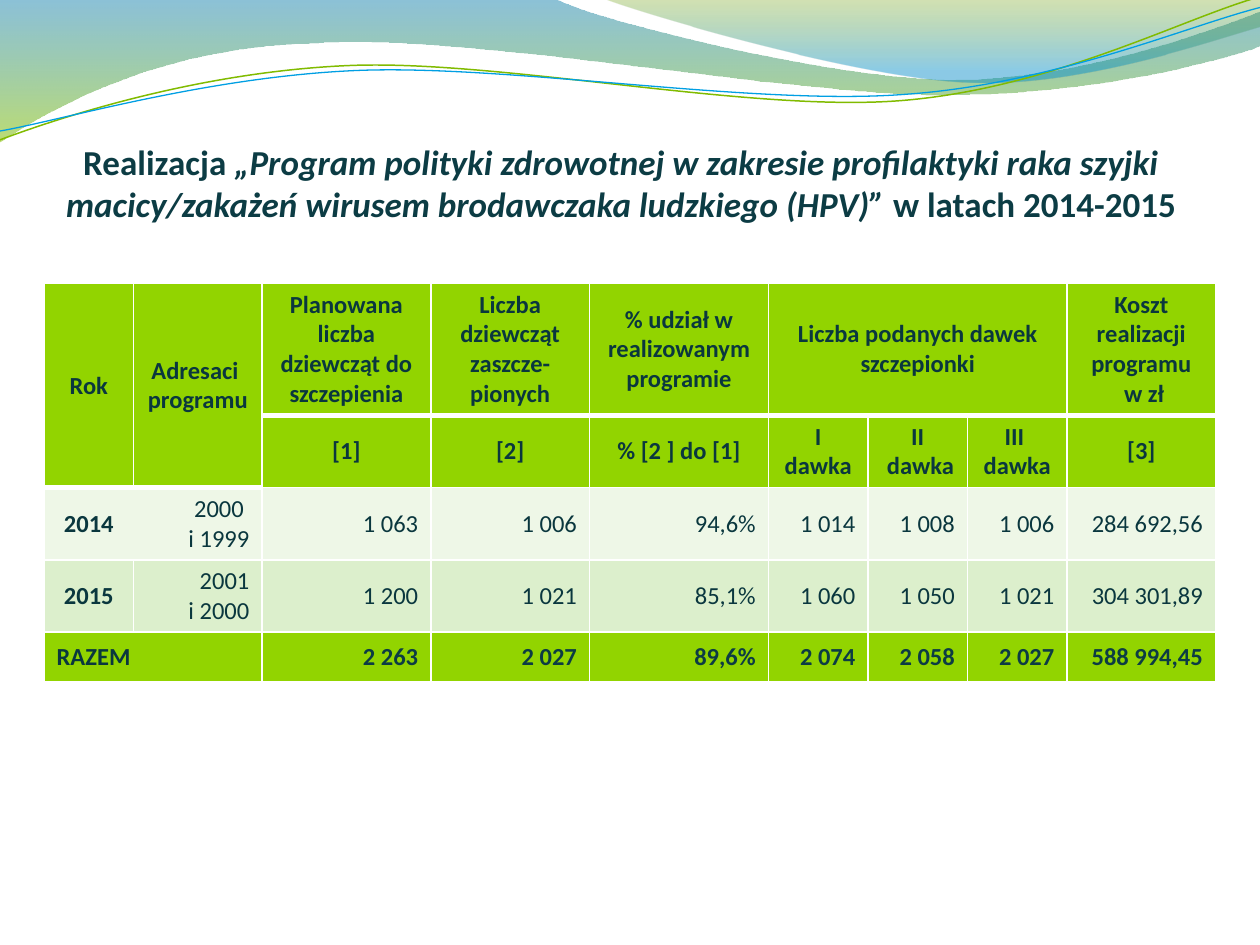
import math
from lxml import etree
from pptx import Presentation
from pptx import util as u
from pptx.dml.color import RGBColor
from pptx.enum import text
from pptx.oxml import ns

COLORS = {
    "background": "FFFFFF", "border": "FFFFFF",
    "title": "0C3C44", "cell": "0A373E",
    "header": "92D400", "light": "EEF7E7", "medium": "DCEFCC",
    "deep_blue": "0076A8", "green": "85C000",
    "olive": "6C9D00", "blue": "008CC8",
    "green_line": "81BB00", "blue_line": "009FE3",
}
FONT = "Calibri"
CURVE_ANGLE = -2.7

COLUMNS = [0.71, 1.02, 1.34, 1.26, 1.42, 0.79, 0.79, 0.79, 1.18]
ROWS = [0.97, 0.52, 0.54, 0.54, 0.39]
ROW_FILLS = ["header", "header", "light", "medium", "header"]
MERGES = [((0, 0), (1, 0)), ((0, 1), (1, 1)), ((0, 5), (0, 7)), ((4, 0), (4, 1))]
CELLS = [
    ["Rok", "Adresaci \vprogramu", "Planowana liczba dziewcząt do\nszczepienia",
     "Liczba dziewcząt zaszcze-pionych", "% udział w realizowanym programie",
     "Liczba podanych dawek szczepionki", "", "", "Koszt realizacji programu\n w zł"],
    ["", "", "[1]", "[2]", "% [2 ] do [1]", "I dawka", "II\v dawka", "III \vdawka", "[3]"],
    ["2014", "2000 \vi 1999", "1 063", "1 006", "94,6%", "1 014", "1 008", "1 006", "284 692,56"],
    ["2015", "2001\vi 2000", "1 200", "1 021", "85,1%", "1 060", "1 050", "1 021", "304 301,89"],
    ["RAZEM", "", "2 263", "2 027", "89,6%", "2 074", "2 058", "2 027", "588 994,45"],
]
TITLE_RUNS = [
    ("Realizacja ", False),
    ("„Program polityki zdrowotnej w zakresie profilaktyki raka szyjki "
     "macicy/zakażeń wirusem brodawczaka ludzkiego (HPV)”", True),
    (" w latach 2014-2015", False),
]

LEFT_WAVE = [
    [(0, 0)], [(4.4, -0.01)], [(4.76, 0.17), (6.64, 0.63), (7.58, 0.63)],
    [(8.53, 0.63), (9.58, 0.26), (10, 0.09)], [(10.01, 0.36)],
    [(9.83, 0.44), (8.7, 0.76), (7.46, 0.75)], [(6.22, 0.75), (3.82, 0.28), (2.57, 0.34)],
    [(1.29, 0.36), (0.46, 0.83), (-0.01, 1.13)], [(0, 0)],
]
RIGHT_WAVE = [
    [(4.79, -0.01)], [(5.09, 0.11), (6.82, 0.62), (7.69, 0.65)],
    [(8.56, 0.69), (9.61, 0.32), (10, 0.21)], [(10, 0)], [(4.79, -0.01)],
]
GREEN_CURVE = [
    [(0, 1.11)], [(0.48, 0.93), (1.58, 0.57), (2.77, 0.52)],
    [(3.95, 0.47), (5.93, 0.89), (7.13, 0.8)], [(8.33, 0.71), (9.38, 0.15), (9.98, -0.02)],
]
BLUE_CURVE = [
    [(0, 1.04)], [(0.47, 0.96), (1.64, 0.61), (2.83, 0.56)],
    [(4.03, 0.51), (5.97, 0.84), (7.17, 0.75)], [(8.36, 0.67), (9.41, 0.21), (10, 0.06)],
]


def color(name):
    return RGBColor.from_string(COLORS[name])


def turn(point, center, degrees):
    cosine, sine = math.cos(math.radians(degrees)), math.sin(math.radians(degrees))
    x, y = point[0] - center[0], point[1] - center[1]
    return center[0] + x * cosine - y * sine, center[1] + x * sine + y * cosine


def add_outline(slide, segments, close):
    corners = [(u.Inches(x), u.Inches(y)) for segment in segments for x, y in segment]
    builder = slide.shapes.build_freeform(*corners[0], scale=1.0)
    builder.add_line_segments(corners[1:], close=close)
    shape = builder.convert_to_shape()
    shape.shadow.inherit = False
    lines = iter(list(shape.element.iter(ns.qn("a:lnTo"))))
    for segment in segments[1:]:
        first, *others = [next(lines) for _ in segment]
        if others:
            bend = etree.Element(ns.qn("a:cubicBezTo"))
            first.addprevious(bend)
            for line in [first, *others]:
                bend.append(line[0])
                line.getparent().remove(line)
    return shape


def add_wave(slide, segments, stops):
    shape = add_outline(slide, segments, True)
    shape.line.fill.background()
    shape.fill.gradient()
    shape.fill.gradient_angle = 270
    for stop, (position, name, _) in zip(shape.fill.gradient_stops, stops):
        stop.position = position
        stop.color.rgb = color(name)
    for element, (_, _, opacity) in zip(shape.element.iter(ns.qn("a:srgbClr")), stops):
        etree.SubElement(element, ns.qn("a:alpha"), val=str(opacity * 1000))


def add_curve(slide, segments, center, name, width):
    level = [[turn(point, center, -CURVE_ANGLE) for point in segment] for segment in segments]
    shape = add_outline(slide, level, False)
    shape.rotation = CURVE_ANGLE
    shape.fill.background()
    shape.line.color.rgb = color(name)
    shape.line.width = u.Pt(width)


def format_title(slide):
    title = slide.shapes.title
    title.left, title.top = u.Inches(0.43), u.Inches(0.92)
    title.width, title.height = u.Inches(9), u.Inches(0.86)
    frame = title.text_frame
    frame.auto_size = text.MSO_AUTO_SIZE.NONE
    frame.word_wrap = True
    frame.vertical_anchor = text.MSO_ANCHOR.BOTTOM
    frame.margin_left = frame.margin_right = frame.margin_bottom = 0
    frame.margin_top = u.Inches(0.05)
    paragraph = frame.paragraphs[0]
    paragraph.alignment = text.PP_ALIGN.CENTER
    paragraph.space_after = u.Pt(18)
    for wording, italic in TITLE_RUNS:
        run = paragraph.add_run()
        run.text = wording
        run.font.italic = italic
        set_font(run.font, 20, True, "title")
    title.element.getparent().append(title.element)


def set_font(font, size, bold, name):
    font.name, font.size, font.bold = FONT, u.Pt(size), bold
    font.color.rgb = color(name)


def set_borders(cell, widths):
    properties = cell._tc.get_or_add_tcPr()
    for index, (side, width) in enumerate(widths.items()):
        line = etree.Element(ns.qn(f"a:ln{side}"), w=str(u.Pt(width)))
        if width:
            fill = etree.SubElement(line, ns.qn("a:solidFill"))
            etree.SubElement(fill, ns.qn("a:srgbClr"), val=COLORS["border"])
        else:
            etree.SubElement(line, ns.qn("a:noFill"))
        properties.insert(index, line)


def border_widths(row, column):
    heavy_bottom = row == 0 or (row == 1 and column < 2)
    heavy_top = row == 1 or (row == 2 and column < 2)
    return {"L": 0 if (row, column) == (2, 1) else 1,
            "R": 0 if (row, column) == (2, 0) else 1,
            "T": 3 if heavy_top else 1, "B": 3 if heavy_bottom else 1}


def cell_alignment(row, column):
    if row < 2 or (row < 4 and column == 0):
        return text.PP_ALIGN.CENTER
    return text.PP_ALIGN.LEFT if column == 0 else text.PP_ALIGN.RIGHT


def add_results_table(slide):
    frame = slide.shapes.add_table(len(ROWS), len(COLUMNS), u.Inches(0.35), u.Inches(2.25),
                                   u.Inches(sum(COLUMNS)), u.Inches(sum(ROWS)))
    table = frame.table
    table.first_row = table.horz_banding = False
    for column, width in zip(table.columns, COLUMNS):
        column.width = u.Inches(width)
    for row, height in zip(table.rows, ROWS):
        row.height = u.Inches(height)
    for start, end in MERGES:
        table.cell(*start).merge(table.cell(*end))
    for r, wordings in enumerate(CELLS):
        for c, wording in enumerate(wordings):
            cell = table.cell(r, c)
            cell.vertical_anchor = text.MSO_ANCHOR.MIDDLE
            cell.fill.solid()
            cell.fill.fore_color.rgb = color(ROW_FILLS[r])
            set_borders(cell, border_widths(r, c))
            cell.text_frame.text = wording
            for paragraph in cell.text_frame.paragraphs:
                paragraph.alignment = cell_alignment(r, c)
                set_font(paragraph.font, 14, r in (0, 1, 4) or c == 0,
                         "title" if r == 4 and c > 0 else "cell")


def main():
    presentation = Presentation()
    presentation.slide_width, presentation.slide_height = u.Inches(10), u.Inches(7.5)
    slide = presentation.slides.add_slide(presentation.slide_layouts[5])
    slide.background.fill.solid()
    slide.background.fill.fore_color.rgb = color("background")
    add_wave(slide, LEFT_WAVE, [(0, "deep_blue", 45), (1, "green", 55)])
    add_wave(slide, RIGHT_WAVE, [(0, "olive", 30), (0.8, "blue", 45)])
    add_curve(slide, GREEN_CURVE, (4.99, 0.57), "green_line", 0.85)
    add_curve(slide, BLUE_CURVE, (5, 0.59), "blue_line", 0.75)
    format_title(slide)
    add_results_table(slide)
    presentation.save("out.pptx")


if __name__ == "__main__":
    main()
